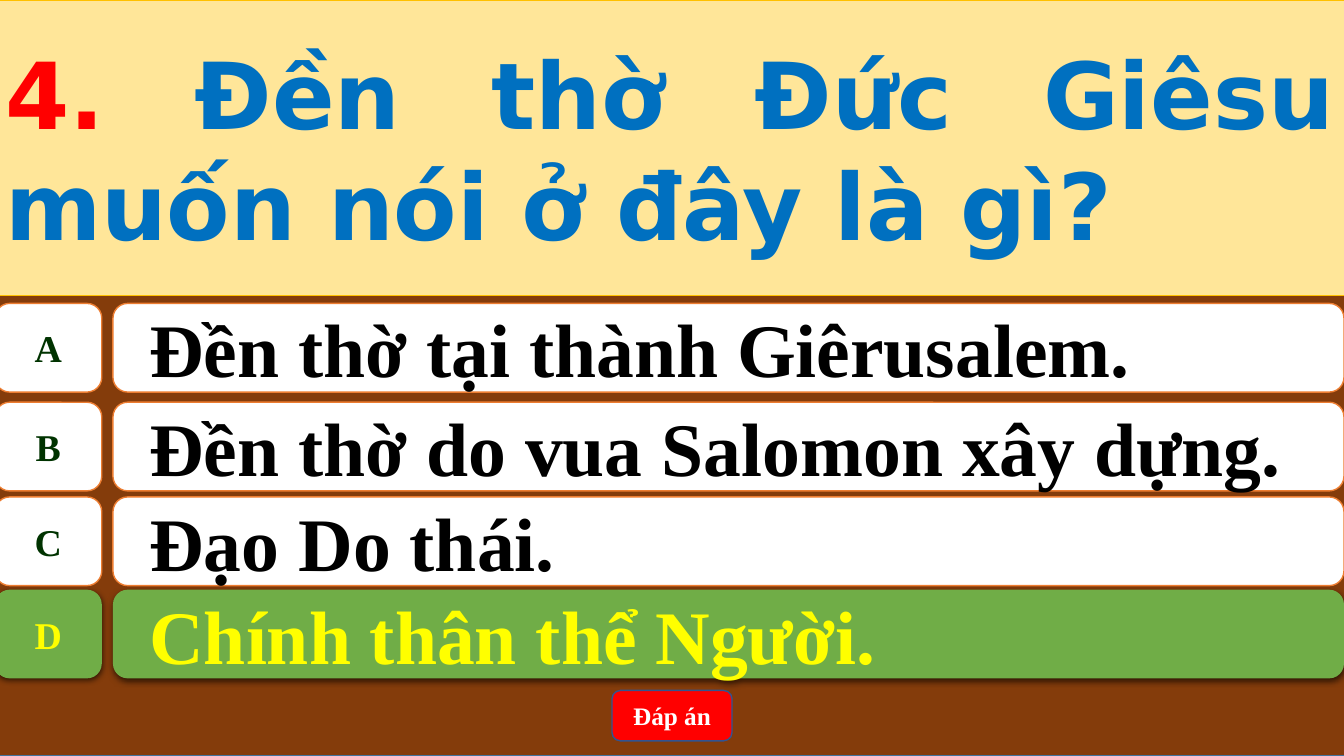
import pptx
import pptx.dml.color
import pptx.enum.shapes
import pptx.enum.text
import pptx.oxml
import pptx.oxml.ns
import pptx.util

Inches = pptx.util.Inches
Pt = pptx.util.Pt
RGBColor = pptx.dml.color.RGBColor
Shapes = pptx.enum.shapes.MSO_SHAPE
Align = pptx.enum.text.PP_ALIGN

BROWN = RGBColor(0x84, 0x3C, 0x0B)
STEEL = RGBColor(0x43, 0x73, 0x9E)
NAVY = RGBColor(0x32, 0x54, 0x91)
CREAM = RGBColor(0xFF, 0xE6, 0x99)
GOLD = RGBColor(0xFF, 0xC0, 0x00)
ORANGE = RGBColor(0xED, 0x7D, 0x31)
GREEN = RGBColor(0x70, 0xAD, 0x47)
DARK_GREEN = RGBColor(0x00, 0x33, 0x00)
BLUE = RGBColor(0x00, 0x70, 0xC0)
RED = RGBColor(0xFF, 0x00, 0x00)
YELLOW = RGBColor(0xFF, 0xFF, 0x00)
WHITE = RGBColor(0xFF, 0xFF, 0xFF)
BLACK = RGBColor(0x00, 0x00, 0x00)

LEFT = -0.05
FULL_WIDTH = 13.39
ROW_HEIGHT = 0.88
SHADOW = (
    '<a:outerShdw %s blurRad="57150" dist="19050" dir="5400000" algn="ctr" rotWithShape="0">'
    '<a:srgbClr val="000000"><a:alpha val="63000"/></a:srgbClr></a:outerShdw>'
    % pptx.oxml.ns.nsdecls("a")
)


class QuizSlide:
    answer_font = "Times New Roman"
    question_font = "DejaVu Sans"

    def __init__(self, presentation):
        self.slide = presentation.slides.add_slide(presentation.slide_layouts[5])

    def paint(self, shape, fill, line, width=1):
        shape.fill.solid()
        shape.fill.fore_color.rgb = fill
        if line is None:
            shape.line.fill.background()
        else:
            shape.line.color.rgb = line
            shape.line.width = Pt(width)

    def format_run(self, run, font, size, color):
        run.font.name = font
        run.font.size = Pt(size)
        run.font.bold = True
        run.font.color.rgb = color

    def box(self, kind, left, top, width, height, fill, line):
        shape = self.slide.shapes.add_shape(
            kind, Inches(left), Inches(top), Inches(width), Inches(height))
        shape.shadow.inherit = False
        self.paint(shape, fill, line)
        return shape

    def set_text(self, shape, text, size, color, align=Align.CENTER):
        frame = shape.text_frame
        frame.text = text
        frame.vertical_anchor = pptx.enum.text.MSO_ANCHOR.MIDDLE
        paragraph = frame.paragraphs[0]
        paragraph.alignment = align
        self.format_run(paragraph.runs[0], self.answer_font, size, color)
        return paragraph

    def cast_shadow(self, shape):
        effects = shape._element.spPr.find(pptx.oxml.ns.qn("a:effectLst"))
        effects.append(pptx.oxml.parse_xml(SHADOW))

    def question(self, number, text):
        title = self.slide.shapes.title
        title.left, title.top = Inches(LEFT), Inches(0)
        title.width, title.height = Inches(FULL_WIDTH), Inches(2.93)
        self.paint(title, CREAM, GOLD, 0.5)
        frame = title.text_frame
        frame.auto_size = pptx.enum.text.MSO_AUTO_SIZE.NONE
        frame.word_wrap = True
        frame.vertical_anchor = pptx.enum.text.MSO_ANCHOR.MIDDLE
        paragraph = frame.paragraphs[0]
        paragraph.alignment = Align.JUSTIFY
        for words, color in ((number, RED), (text, BLUE)):
            run = paragraph.add_run()
            run.text = words
            self.format_run(run, self.question_font, 66, color)
        self.slide.shapes._spTree.append(title._element)

    def answer(self, letter, text, top, correct):
        fill, line = (GREEN, None) if correct else (WHITE, ORANGE)
        label = self.box(Shapes.FLOWCHART_ALTERNATE_PROCESS,
                         LEFT, top, 1.06, ROW_HEIGHT, fill, line)
        self.set_text(label, letter, 27, YELLOW if correct else DARK_GREEN)
        label.text_frame.word_wrap = False

        bar = self.box(Shapes.ROUNDED_RECTANGLE, 1.12, top, 12.21, ROW_HEIGHT, fill, line)
        paragraph = self.set_text(bar, text, 54, YELLOW if correct else BLACK, Align.LEFT)
        paragraph.level = 1
        properties = paragraph._p.get_or_add_pPr()
        properties.set("marL", str(Inches(0.5)))
        properties.set("indent", str(Inches(-0.28)))
        if correct:
            self.cast_shadow(label)
            self.cast_shadow(bar)

    def button(self, text):
        shape = self.box(Shapes.ROUNDED_RECTANGLE, 6.07, 6.85, 1.19, 0.5, RED, NAVY)
        self.set_text(shape, text, 18, WHITE)


def main():
    presentation = pptx.Presentation()
    presentation.slide_width = Inches(13.33)
    presentation.slide_height = Inches(7.5)

    quiz = QuizSlide(presentation)
    quiz.box(Shapes.RECTANGLE, LEFT, 0, FULL_WIDTH, 7.5, BROWN, STEEL)
    quiz.question("4. ", "Đền thờ Đức Giêsu muốn nói ở đây là gì?")
    answers = (
        ("A", "Đền thờ tại thành Giêrusalem.", 3.01),
        ("B", "Đền thờ do vua Salomon xây dựng.", 3.99),
        ("C", "Đạo Do thái.", 4.93),
        ("D", "Chính thân thể Người.", 5.85),
    )
    for letter, text, top in answers:
        quiz.answer(letter, text, top, letter == "D")
    quiz.button("Đáp án")

    presentation.save("out.pptx")


if __name__ == "__main__":
    main()
